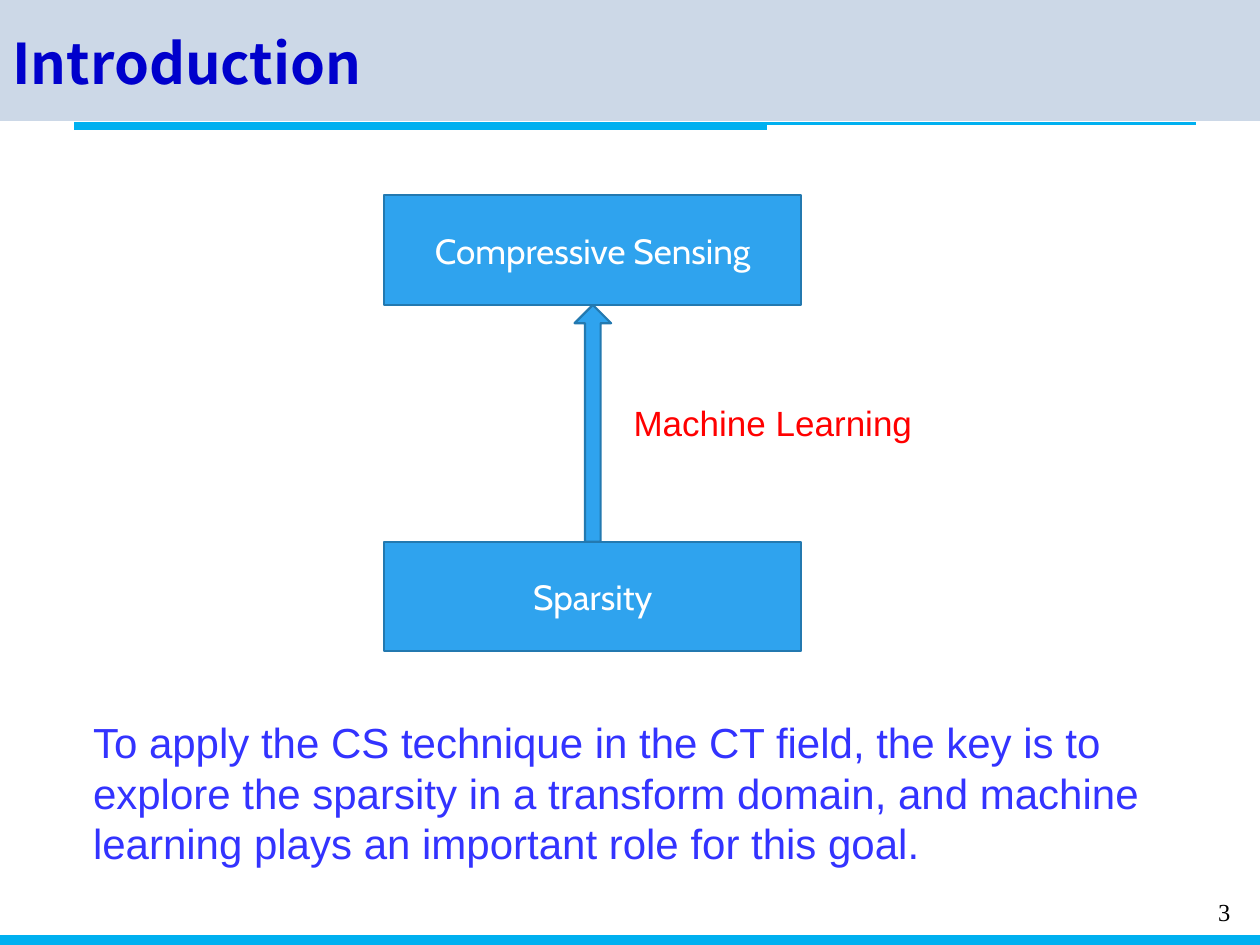
from dataclasses import dataclass

from pptx import Presentation
from pptx.dml.color import RGBColor
from pptx.enum.shapes import MSO_SHAPE
from pptx.enum.text import MSO_ANCHOR, PP_ALIGN
from pptx.util import Inches, Pt

RECT, UP_ARROW = MSO_SHAPE.RECTANGLE, MSO_SHAPE.UP_ARROW
MIDDLE, CENTER, LEFT = MSO_ANCHOR.MIDDLE, PP_ALIGN.CENTER, PP_ALIGN.LEFT


@dataclass(frozen=True)
class Style:
    """Font name, size, colour and weight of a text."""
    font: str
    size: int
    color: str
    bold: bool = False


class Theme:
    """Colours and text styles of the slide."""
    accent = "00B0F0"
    band = "CCD8E7"
    fill = "2FA3EE"
    edge = "2379B0"
    title = Style("Noto Sans CJK SC", 32, "0000CC", True)
    box = Style("Cabin", 20, "FFFFFF")
    label = Style("Arial", 20, "FF0000")
    body = Style("Arial", 24, "3333FF")
    number = Style("Times New Roman", 14, "000000")


def paint(sp, fill, edge=None, width=1.25):
    """Set fill and outline of a shape and drop its shadow."""
    sp.shadow.inherit = False
    sp.fill.solid()
    sp.fill.fore_color.rgb = RGBColor.from_string(fill)
    if edge:
        sp.line.color.rgb = RGBColor.from_string(edge)
        sp.line.width = Pt(width)
    else:
        sp.line.fill.background()


def write(sp, text, style, align=LEFT):
    """Put one styled paragraph into a shape."""
    p = sp.text_frame.paragraphs[0]
    p.text = text
    p.alignment = align
    p.font.name = style.font
    p.font.size = Pt(style.size)
    p.font.bold = style.bold
    p.font.color.rgb = RGBColor.from_string(style.color)


def add_block(s, kind, x, y, w, h, fill, edge=None):
    """Add a painted preset shape."""
    sp = s.shapes.add_shape(kind, Inches(x), Inches(y), Inches(w), Inches(h))
    paint(sp, fill, edge)
    return sp


def add_text(s, x, y, w, h, text, style, wrap=True):
    """Add a text box."""
    sp = s.shapes.add_textbox(Inches(x), Inches(y), Inches(w), Inches(h))
    sp.text_frame.word_wrap = wrap
    write(sp, text, style)


def add_rule(s, x, y, w, thick_w, thick_h):
    """Add the thin rule with its thick left part."""
    builder = s.shapes.build_freeform(Inches(x), Inches(y))
    corners = [(x + thick_w, y), (x + thick_w, y + thick_h), (x, y + thick_h)]
    builder.add_line_segments([(Inches(a), Inches(b)) for a, b in corners])
    paint(builder.convert_to_shape(), Theme.accent)
    line = s.shapes.build_freeform(Inches(x), Inches(y))
    line.add_line_segments([(Inches(x + w), Inches(y))], close=False)
    paint(line.convert_to_shape(), Theme.accent, Theme.accent, 1.5)


def add_header(s, x, y, w, h, title):
    """Add the title band and the rule below it."""
    add_rule(s, x + 0.59, y + h + 0.02, 8.9, 5.5, 0.05)
    add_block(s, RECT, x, y, w, h, Theme.band)
    add_text(s, x, y + 0.21, 4.06, 0.64, title, Theme.title)


def add_footer(s, x, y, w, h, number):
    """Add the bottom bar and the slide number above it."""
    add_block(s, RECT, x, y, w, h, Theme.accent, Theme.accent)
    add_text(s, x + w - 0.43, y - 0.36, 0.43, 0.34, number, Theme.number)


def add_diagram(s, x, y, w, h, top, bottom, label):
    """Add two boxes joined by a labelled upward arrow."""
    box_h, arrow_w = 0.87, 0.29
    for text, box_y in ((top, y), (bottom, y + h - box_h)):
        sp = add_block(s, RECT, x, box_y, w, box_h, Theme.fill, Theme.edge)
        sp.text_frame.word_wrap = True
        sp.text_frame.vertical_anchor = MIDDLE
        write(sp, text, Theme.box, CENTER)
    arrow = add_block(s, UP_ARROW, x + (w - arrow_w) / 2, y + box_h,
                      arrow_w, h - 2 * box_h, Theme.fill, Theme.edge)
    arrow.adjustments[0] = 0.43
    arrow.adjustments[1] = 0.5
    add_text(s, x + 1.88, y + 1.59, 2.43, 0.44, label, Theme.label, wrap=False)


def main():
    """Build the slide and save it."""
    prs = Presentation()
    prs.slide_width, prs.slide_height = Inches(10), Inches(7.5)
    s = prs.slides.add_slide(prs.slide_layouts[6])
    add_header(s, 0, -0.03, 10, 0.99, "Introduction")
    add_footer(s, 0, 7.43, 10, 0.07, "3")
    add_diagram(s, 3.05, 1.55, 3.31, 3.62,
                "Compressive Sensing", "Sparsity", "Machine Learning")
    add_text(s, 0.64, 5.64, 8.87, 1.31,
             "To apply the CS technique in the CT field, the key is to explore "
             "the sparsity in a transform domain, and machine learning plays "
             "an important role for this goal.", Theme.body)
    prs.save("out.pptx")


if __name__ == "__main__":
    main()
